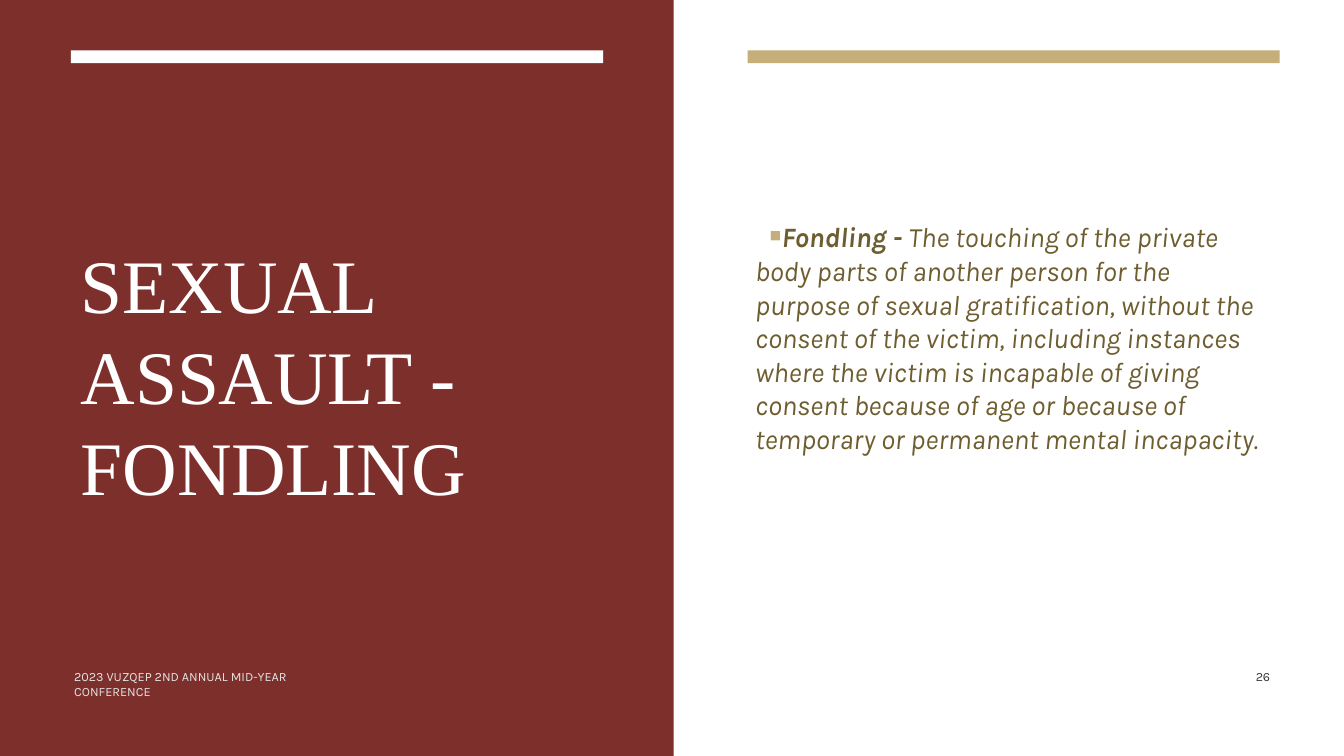
from pptx import Presentation
from pptx.dml.color import RGBColor
from pptx.enum.shapes import MSO_SHAPE
from pptx.enum.text import MSO_ANCHOR
from pptx.oxml import parse_xml
from pptx.oxml.ns import nsdecls
from pptx.util import Cm, Pt

MAROON = RGBColor(0x7D, 0x2F, 0x2C)
WHITE = RGBColor(0xFF, 0xFF, 0xFF)
GOLD = RGBColor(0xC5, 0xAE, 0x79)
BROWN = RGBColor(0x6E, 0x5D, 0x2F)
PALE_GREY = RGBColor(0xE3, 0xE3, 0xE3)
DARK_GREY = RGBColor(0x3C, 0x3C, 0x3C)

PAGE_WIDTH, PAGE_HEIGHT = 33.87, 19.05
PANEL_WIDTH = 16.98
BAR_TOP, BAR_WIDTH, BAR_HEIGHT = 1.27, 13.41, 0.32
FOOTER_TOP, FOOTER_HEIGHT = 16.82, 0.46


def add_block(page, left, top, width, height, color):
    block = page.shapes.add_shape(
        MSO_SHAPE.RECTANGLE, Cm(left), Cm(top), Cm(width), Cm(height))
    block.shadow.inherit = False
    block.fill.solid()
    block.fill.fore_color.rgb = color
    block.line.fill.background()


def add_text(page, left, top, width, height, spans, *, size, color,
             font="Karla", italic=False, tracking=0):
    box = page.shapes.add_textbox(Cm(left), Cm(top), Cm(width), Cm(height))
    frame = box.text_frame
    frame.word_wrap = True
    frame.vertical_anchor = MSO_ANCHOR.TOP
    frame.margin_left = frame.margin_right = frame.margin_bottom = 0
    frame.margin_top = Cm(0.03)
    para = frame.paragraphs[0]
    para.space_before = Pt(1)
    para._p.get_or_add_pPr().set("marL", str(Cm(0.03)))
    for text, bold in spans:
        span = para.add_run()
        span.text = text
        span.font.name = font
        span.font.size = Pt(size)
        span.font.bold = bold
        span.font.italic = italic
        span.font.color.rgb = color
        if tracking:
            span.font._element.set("spc", str(tracking))
    return para


def add_square_bullet(para, color, indent, tab):
    properties = para._p.get_or_add_pPr()
    properties.set("indent", str(Cm(indent)))
    for markup in (
        f'<a:buClr {nsdecls("a")}><a:srgbClr val="{color}"/></a:buClr>',
        f'<a:buSzPct {nsdecls("a")} val="60000"/>',
        f'<a:buChar {nsdecls("a")} char="◾"/>',
        f'<a:tabLst {nsdecls("a")}><a:tab pos="{Cm(tab)}" algn="l"/></a:tabLst>',
    ):
        properties.append(parse_xml(markup))


def add_title_panel(page, left, width, title, footer):
    add_block(page, left, 0, width, PAGE_HEIGHT, MAROON)
    add_block(page, left + 1.79, BAR_TOP, BAR_WIDTH, BAR_HEIGHT, WHITE)
    add_text(page, left + 2.01, 5.97, 10.29, 6.93, [(title, False)],
             size=54, color=WHITE, font="Times New Roman", tracking=-15)
    add_text(page, left + 1.84, FOOTER_TOP, 7, FOOTER_HEIGHT,
             [(footer, False)], size=9, color=PALE_GREY)


def add_definition_panel(page, left, term, meaning, number):
    add_block(page, left + 1.86, BAR_TOP, BAR_WIDTH, BAR_HEIGHT, GOLD)
    para = add_text(page, left + 2.02, 5.51, 12.88, 6.86,
                    [(term, True), (meaning, False)],
                    size=20, color=BROWN, italic=True, tracking=-3)
    add_square_bullet(para, GOLD, 0.36, 0.41)
    add_text(page, left + 14.64, FOOTER_TOP, 0.5, FOOTER_HEIGHT,
             [(number, False)], size=9, color=DARK_GREY, tracking=-20)


def main():
    deck = Presentation()
    deck.slide_width, deck.slide_height = Cm(PAGE_WIDTH), Cm(PAGE_HEIGHT)
    page = deck.slides.add_slide(deck.slide_layouts[6])
    add_title_panel(page, 0, PANEL_WIDTH, "SEXUAL ASSAULT - FONDLING",
                    "2023 VUZQEP 2ND ANNUAL MID-YEAR CONFERENCE")
    add_definition_panel(
        page, PANEL_WIDTH, "Fondling - ",
        "The touching of the private body parts of another person for the "
        "purpose of sexual gratification, without the consent of the victim, "
        "including instances where the victim is incapable of giving consent "
        "because of age or because of temporary or permanent mental "
        "incapacity.", "26")
    deck.save("out.pptx")


if __name__ == "__main__":
    main()
